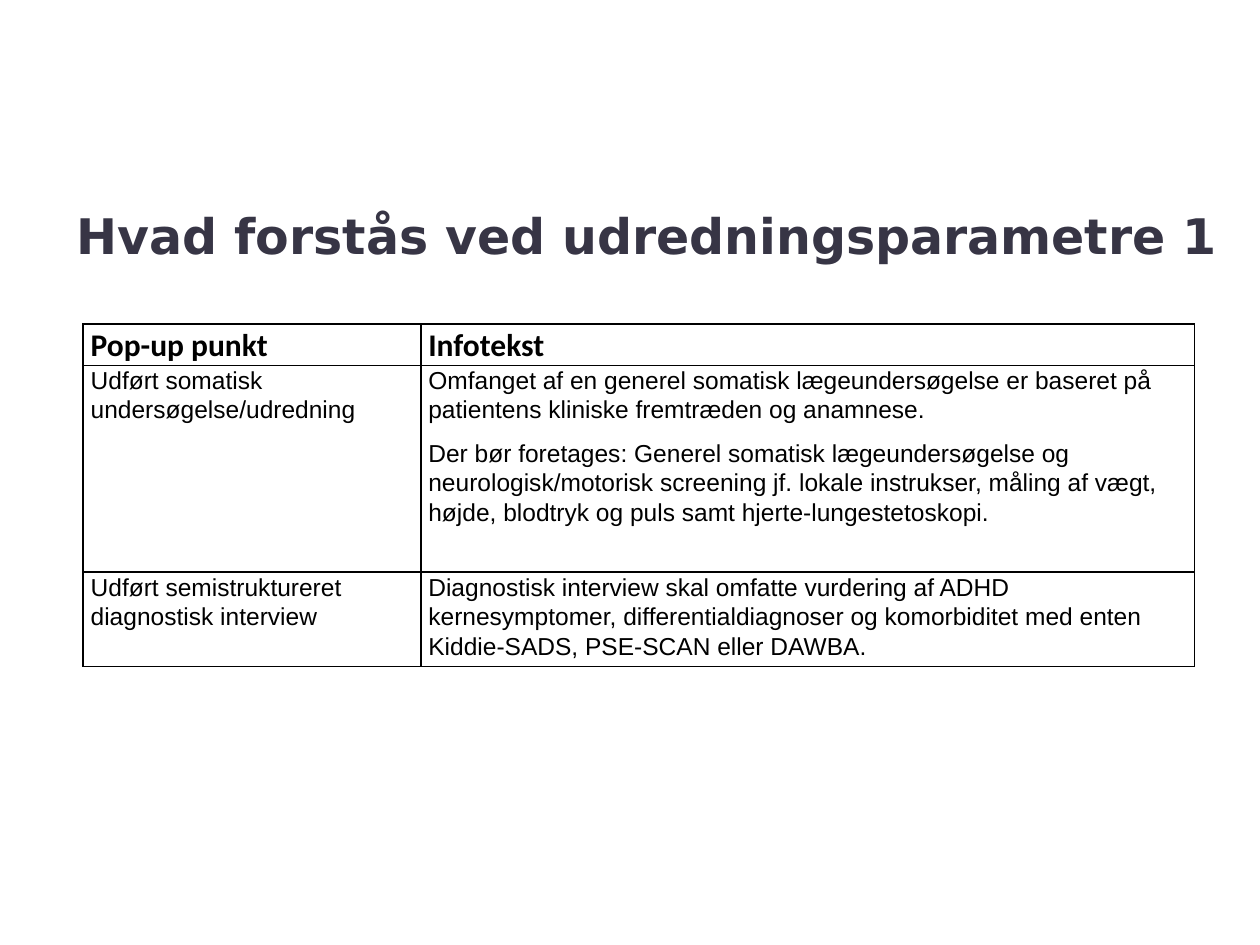
from lxml import etree
from pptx import Presentation
from pptx import util as u
from pptx.dml.color import RGBColor
from pptx.enum import text as t
from pptx.oxml import ns

COLORS = {"title": "373545", "ink": "000000", "paper": "FFFFFF"}
HEADS = ["Pop-up punkt", "Infotekst"]
ROWS = [
    [["Udført somatisk undersøgelse/udredning"],
     ["Omfanget af en generel somatisk lægeundersøgelse er baseret på "
      "patientens kliniske fremtræden og anamnese.",
      "Der bør foretages: Generel somatisk lægeundersøgelse og "
      "neurologisk/motorisk screening jf. lokale instrukser, måling af vægt, "
      "højde, blodtryk og puls samt hjerte-lungestetoskopi."]],
    [["Udført semistruktureret diagnostisk interview"],
     ["Diagnostisk interview skal omfatte vurdering af ADHD kernesymptomer, "
      "differentialdiagnoser og komorbiditet med enten Kiddie-SADS, PSE-SCAN "
      "eller DAWBA."]],
]


def write(frame, lines, font="Arial", size=14, bold=False, color="ink",
          space=None, after=None):
    """Fill a text frame with one paragraph per line."""
    frame.word_wrap = True
    for i, line in enumerate(lines):
        para = frame.add_paragraph() if i else frame.paragraphs[0]
        para.line_spacing = space
        if after is not None:
            para.space_after = u.Pt(after)
        run = para.add_run()
        run.text = line
        run.font.name, run.font.size, run.font.bold = font, u.Pt(size), bold
        run.font.color.rgb = RGBColor.from_string(COLORS[color])


class Deck:
    def __init__(self, wide, high):
        self.prs = Presentation()
        self.prs.slide_width = u.Inches(wide)
        self.prs.slide_height = u.Inches(high)
        self.slide = self.prs.slides.add_slide(self.prs.slide_layouts[6])
        self.body = dict(space=1.07, after=8)
        self.head = dict(self.body, font="Calibri", size=18, bold=True)

    def title(self, line, *box):
        frame = self.slide.shapes.add_textbox(*map(u.Inches, box)).text_frame
        frame.vertical_anchor = t.MSO_ANCHOR.MIDDLE
        write(frame, [line], font="DejaVu Sans", size=28, bold=True,
              color="title")

    def border(self, cell, width=1):
        props = cell._tc.get_or_add_tcPr()
        for side in ("lnL", "lnR", "lnT", "lnB"):
            line = etree.SubElement(props, ns.qn("a:" + side),
                                    w=str(u.Pt(width)))
            fill = etree.SubElement(line, ns.qn("a:solidFill"))
            etree.SubElement(fill, ns.qn("a:srgbClr"), val=COLORS["ink"])

    def cell(self, cell, lines, style):
        cell.margin_left = cell.margin_right = u.Inches(0.06)
        cell.margin_top = cell.margin_bottom = 0
        self.border(cell)
        cell.fill.solid()
        cell.fill.fore_color.rgb = RGBColor.from_string(COLORS["paper"])
        write(cell.text_frame, lines, **style)

    def table(self, heads, rows, left, top, cols, highs):
        box = map(u.Inches, (left, top, sum(cols), sum(highs)))
        table = self.slide.shapes.add_table(len(highs), len(cols), *box).table
        for col, wide in zip(table.columns, cols):
            col.width = u.Inches(wide)
        for row, high in zip(table.rows, highs):
            row.height = u.Inches(high)
        grid = [[[head] for head in heads]] + rows
        for r, row in enumerate(grid):
            for c, lines in enumerate(row):
                self.cell(table.cell(r, c), lines,
                          self.body if r else self.head)


def main():
    deck = Deck(10, 7.5)
    # Heading
    deck.title("Hvad forstås ved udredningsparametre 1", 0.51, 1.55, 9.61, 0.63)
    # Table of assessment points
    deck.table(HEADS, ROWS, 0.66, 2.57, cols=[2.68, 6.14],
               highs=[0.33, 1.64, 0.7])
    deck.prs.save("out.pptx")


if __name__ == "__main__":
    main()
